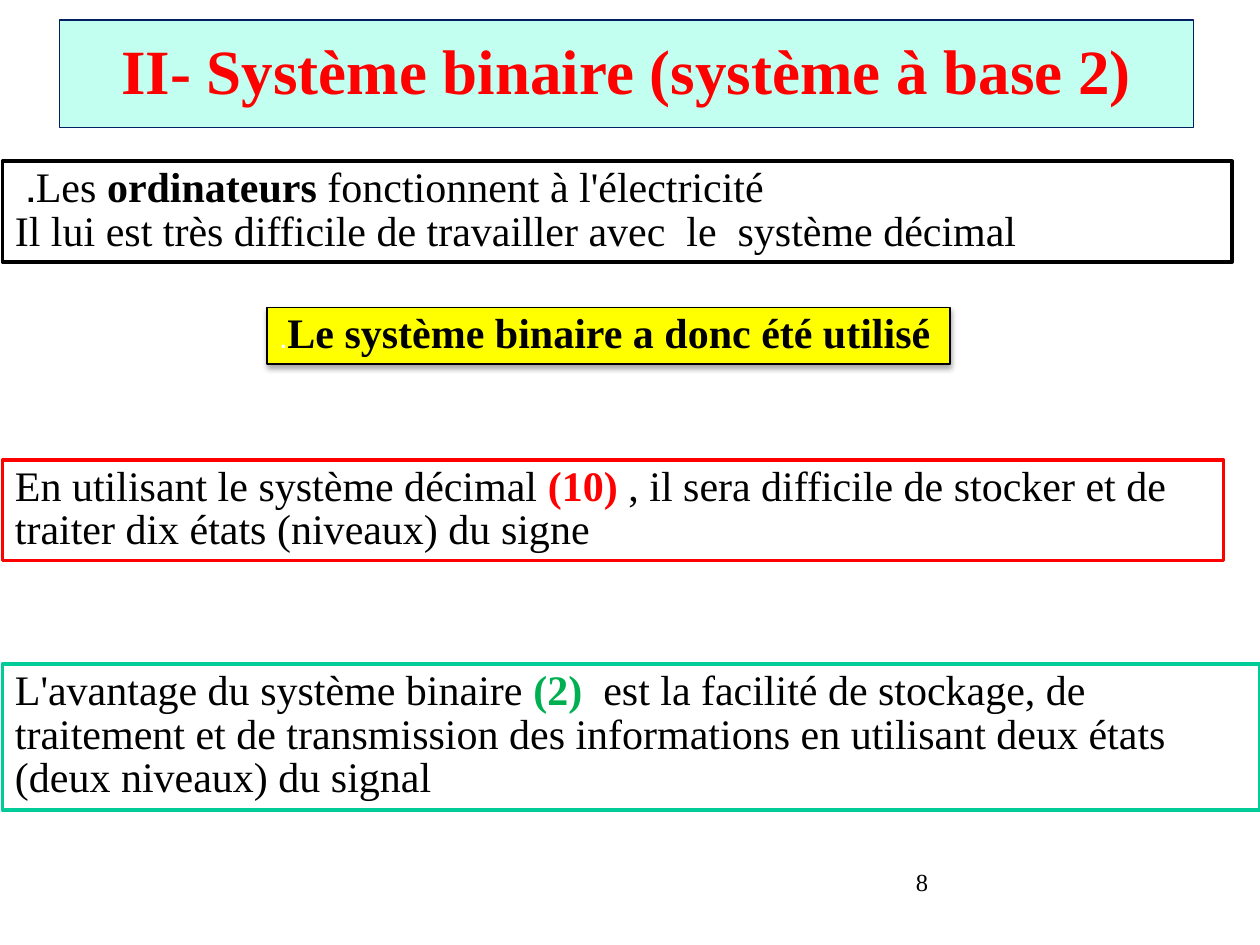
from lxml import etree
from pptx import Presentation
from pptx import util as u
from pptx.dml.color import RGBColor
from pptx.enum import shapes, text
from pptx.oxml import ns

COLORS = {
    "black": "000000", "white": "FFFFFF", "red": "FF0000", "green": "00B050",
    "teal": "00CC99", "yellow": "FFFF00", "mint": "C2FFF0", "navy": "002060",
}
FONT = "Times New Roman"


def color(name):
    return RGBColor.from_string(COLORS[name])


def place(part, box):
    part.left, part.top, part.width, part.height = map(u.Inches, box)


def paint(part, fill, line, weight):
    part.fill.solid()
    part.fill.fore_color.rgb = color(fill)
    part.line.color.rgb = color(line)
    part.line.width = u.Pt(weight)


def add_run(paragraph, words, ink="black", bold=False, size=24):
    run = paragraph.add_run()
    run.text = words
    run.font.name = FONT
    run.font.size = u.Pt(size)
    run.font.bold = bold
    run.font.color.rgb = color(ink)


def add_shadow(part):
    effects = etree.SubElement(part._element.spPr, ns.qn("a:effectLst"))
    shadow = etree.SubElement(
        effects, ns.qn("a:outerShdw"), blurRad=str(u.Pt(3.1)),
        dist=str(u.Pt(1.8)), dir="5400000", rotWithShape="0")
    ink = etree.SubElement(shadow, ns.qn("a:srgbClr"), val=COLORS["black"])
    etree.SubElement(ink, ns.qn("a:alpha"), val="35000")


def heading(slide, box):
    title = slide.shapes.title
    place(title, box)
    paint(title, "mint", "navy", 0.75)
    title.text_frame.vertical_anchor = text.MSO_ANCHOR.MIDDLE
    paragraph = title.text_frame.paragraphs[0]
    paragraph.alignment = text.PP_ALIGN.CENTER
    paragraph.line_spacing = 0.93
    add_run(paragraph, "II- Système binaire (système à base 2)", "red", True, 36)


def statement(slide, box, paragraphs, line, fill="white", weight=2, wrap=True):
    panel = slide.shapes.add_shape(shapes.MSO_SHAPE.RECTANGLE, *map(u.Inches, box))
    paint(panel, fill, line, weight)
    frame = panel.text_frame
    frame.word_wrap = wrap
    frame.auto_size = text.MSO_AUTO_SIZE.SHAPE_TO_FIT_TEXT
    frame.vertical_anchor = text.MSO_ANCHOR.TOP
    for index, runs in enumerate(paragraphs):
        paragraph = frame.add_paragraph() if index else frame.paragraphs[0]
        paragraph.alignment = text.PP_ALIGN.LEFT
        paragraph.line_spacing = 0.87
        paragraph._p.get_or_add_pPr().set("rtl", "1")
        for run in runs:
            add_run(paragraph, *run)
    return panel


def page_number(slide, box):
    number = slide.shapes.add_textbox(*map(u.Inches, box))
    number.text_frame.word_wrap = True
    add_run(number.text_frame.paragraphs[0], "8", size=14)


def main():
    deck = Presentation()
    deck.slide_width, deck.slide_height = u.Inches(10), u.Inches(7.5)
    slide = deck.slides.add_slide(deck.slide_layouts[5])

    page_number(slide, (7.17, 6.83, 2.33, 0.52))
    heading(slide, (0.47, 0.16, 9, 0.85))

    decimal = statement(slide, (0.02, 3.65, 9.69, 0.8), [[
        ("En utilisant le système décimal ",),
        ("(10) ", "red", True),
        (", il sera difficile de stocker et de traiter dix états (niveaux) du signe",),
    ]], "red")
    binary = statement(slide, (0.02, 5.27, 9.98, 1.16), [[
        ("L'avantage du système binaire ",),
        ("(2)  ", "green", True),
        ("est la facilité de stockage, de traitement et de transmission des "
         "informations en utilisant deux états (deux niveaux) du signal",),
    ]], "teal")
    conclusion = statement(slide, (2.12, 2.44, 5.42, 0.45), [[
        ("Le système binaire a donc été utilisé", "black", True),
        (".", "white", False, 18),
    ]], "black", "yellow", 0.75, False)
    computers = statement(slide, (0.02, 1.28, 9.76, 0.8), [
        [("Les ",), ("ordinateurs", "black", True),
         (" fonctionnent à l'électricité. ",)],
        [("Il lui est très difficile de travailler avec  le  système décimal",)],
    ], "black")

    for panel in (decimal, binary, computers):
        panel.shadow.inherit = False
    add_shadow(conclusion)

    deck.save("out.pptx")


if __name__ == "__main__":
    main()
